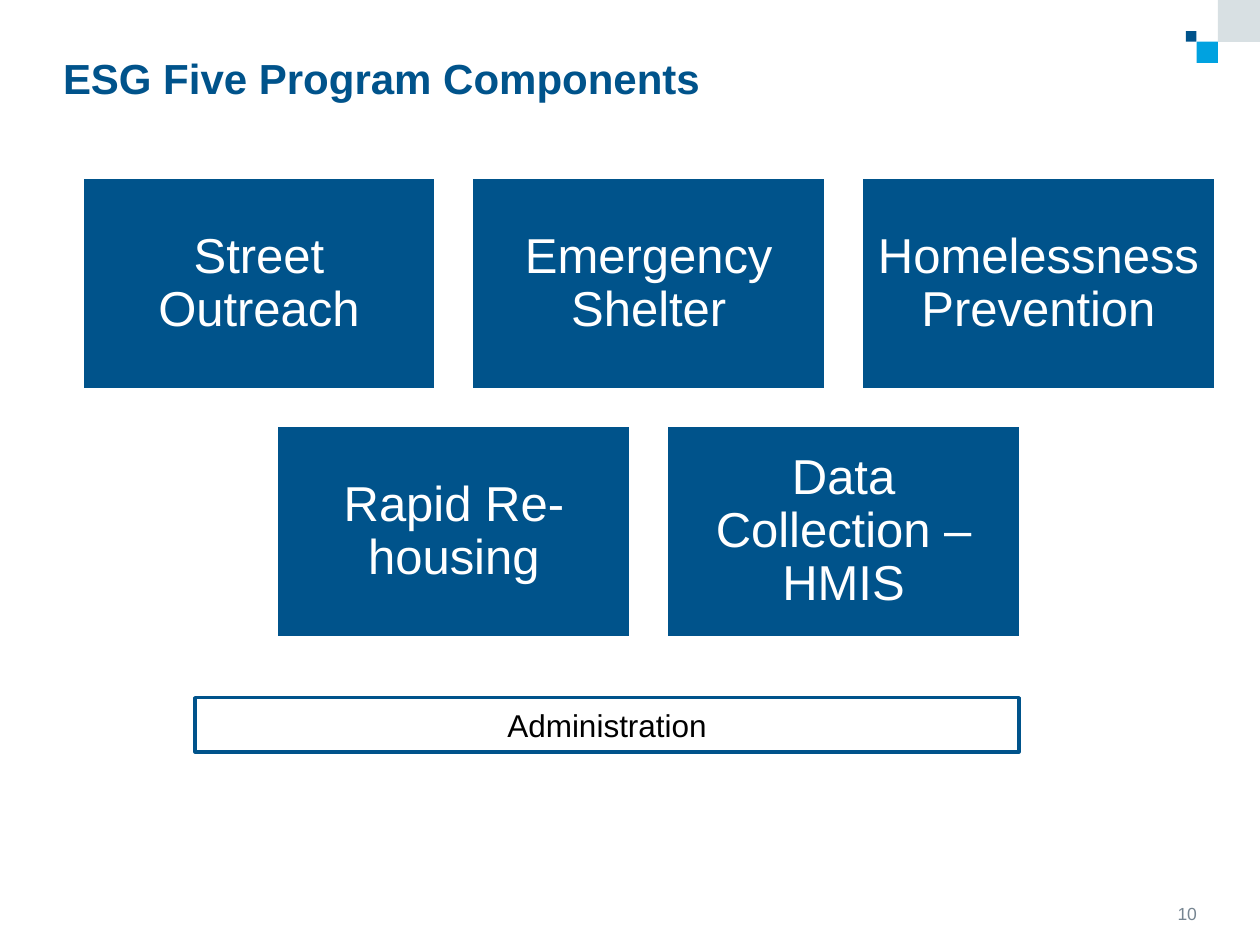
import pptx
import pptx.dml.color
import pptx.enum.shapes
import pptx.enum.text
import pptx.util

Pt = pptx.util.Pt
ALIGN = pptx.enum.text.PP_ALIGN
ANCHOR = pptx.enum.text.MSO_ANCHOR

THEME = {
    "font": "Arial",
    "navy": "00538B", "sky": "00A2E0", "mist": "D8E0E3",
    "slate": "768591", "white": "FFFFFF", "black": "000000",
    "title": 24, "card": 28, "bar": 18, "number": 10,
}


def rgb(name):
    return pptx.dml.color.RGBColor.from_string(THEME[name])


def write(holder, text, size, color, align, anchor, inset=(0, 0), spacing=1.0, bold=False):
    """Fill a shape with one formatted paragraph; inset is (sides, top and bottom)."""
    frame = holder.text_frame
    frame.text = text
    sides, ends = (Pt(value) for value in inset)
    paragraph = frame.paragraphs[0]
    formats = [
        (frame, {"word_wrap": True, "auto_size": pptx.enum.text.MSO_AUTO_SIZE.NONE,
                 "vertical_anchor": anchor, "margin_left": sides, "margin_right": sides,
                 "margin_top": ends, "margin_bottom": ends}),
        (paragraph, {"alignment": align, "line_spacing": spacing}),
        (paragraph.runs[0].font, {"name": THEME["font"], "size": Pt(THEME[size]), "bold": bold}),
    ]
    for target, values in formats:
        for key, value in values.items():
            setattr(target, key, value)
    paragraph.runs[0].font.color.rgb = rgb(color)


def add_block(left, top, width, height, fill, outline=None):
    block = slide.shapes.add_shape(pptx.enum.shapes.MSO_SHAPE.RECTANGLE,
                                   Pt(left), Pt(top), Pt(width), Pt(height))
    block.shadow.inherit = False
    block.fill.solid()
    block.fill.fore_color.rgb = rgb(fill)
    if outline:
        block.line.color.rgb = rgb(outline)
        block.line.width = Pt(2)
    else:
        block.line.fill.background()
    return block


deck = pptx.Presentation()
deck.slide_width, deck.slide_height = Pt(720), Pt(540)
slide = deck.slides.add_slide(deck.slide_layouts[5])

# Corner squares
for left, top, side, fill in [(677.7, 17.8, 6, "navy"), (683.8, 23.8, 12.2, "sky"),
                              (696, 0, 24, "mist")]:
    add_block(left, top, side, side, fill)

# Title
title = slide.shapes.title
for key, value in {"left": 36, "top": 33, "width": 648, "height": 56}.items():
    setattr(title, key, Pt(value))
write(title, "ESG Five Program Components", "title", "navy", ALIGN.LEFT, ANCHOR.TOP,
      spacing=0.9, bold=True)

# Page number
page_number = slide.shapes.add_textbox(Pt(656), Pt(499), Pt(28), Pt(28.8))
write(page_number, "10", "number", "slate", ALIGN.RIGHT, ANCHOR.BOTTOM)

# Program components: each row is centred under the widest one
components = [
    ["Street Outreach", "Emergency Shelter", "Homelessness Prevention"],
    ["Rapid Re-housing", "Data Collection – HMIS"],
]
card_width, card_height, gap = 202.4, 121.4, 20.3
grid_left, grid_top = 46.8, 101.5
column_step, row_step = card_width + gap, card_height + gap
for row, names in enumerate(components):
    row_left = grid_left + (len(components[0]) - len(names)) * column_step / 2
    for column, name in enumerate(names):
        card = add_block(row_left + column * column_step, grid_top + row * row_step,
                         card_width, card_height, "navy", "white")
        write(card, name, "card", "white", ALIGN.CENTER, ANCHOR.MIDDLE,
              inset=(8.4, 8.4), spacing=0.9)

# Administration bar
administration = add_block(111.5, 398.7, 470.8, 31, "white", "navy")
write(administration, "Administration", "bar", "black", ALIGN.CENTER, ANCHOR.MIDDLE,
      inset=(7.2, 3.6))

deck.save("out.pptx")
